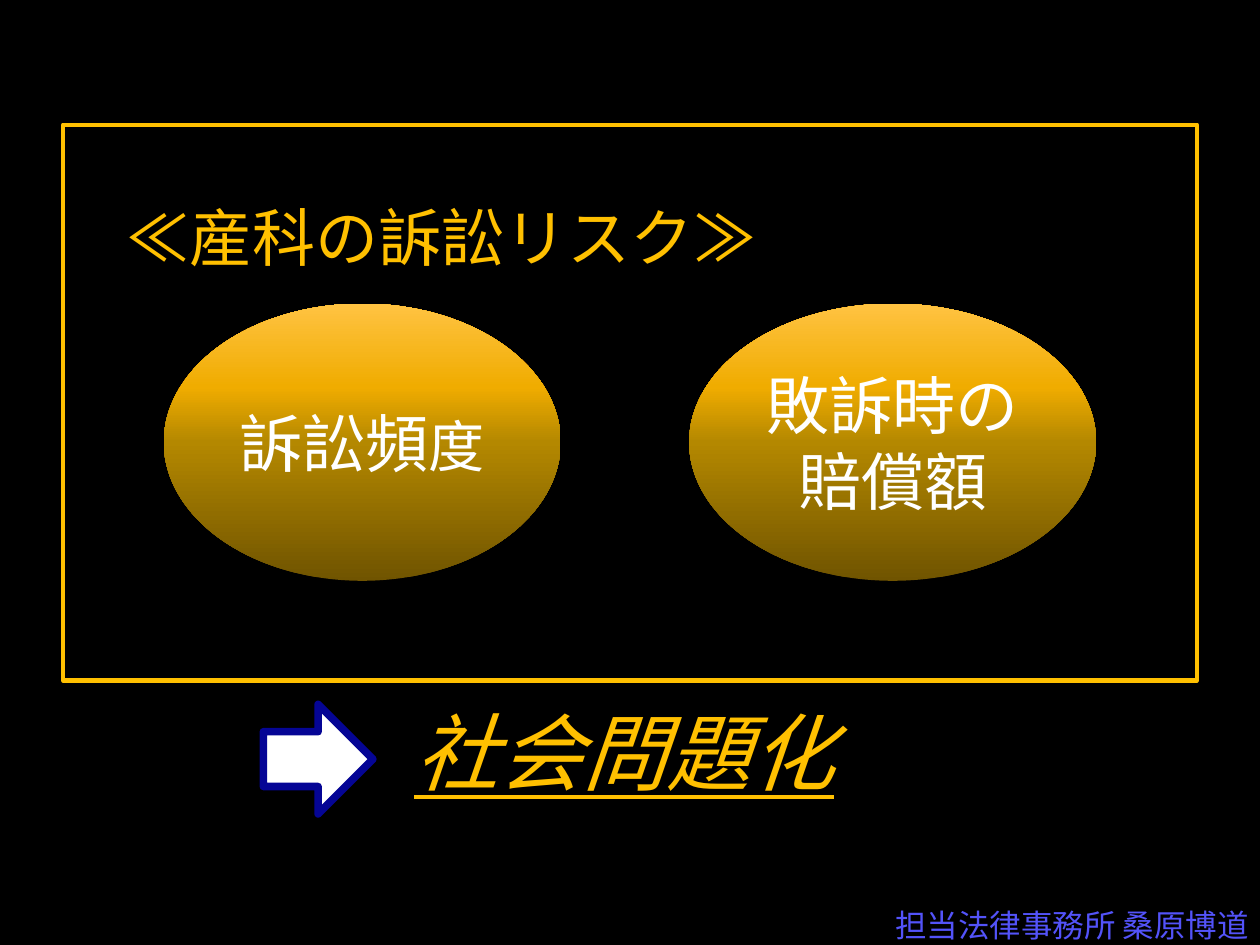
"""Build a slide on the litigation risk of obstetrics."""
from dataclasses import dataclass

from lxml import etree
from pptx import Presentation
from pptx.dml.color import RGBColor
from pptx.enum.shapes import MSO_SHAPE
from pptx.enum.text import MSO_ANCHOR, MSO_AUTO_SIZE, PP_ALIGN
from pptx.oxml.ns import qn
from pptx.util import Inches, Pt

OVAL, ARROW = MSO_SHAPE.OVAL, MSO_SHAPE.RIGHT_ARROW
TOP, MIDDLE = MSO_ANCHOR.TOP, MSO_ANCHOR.MIDDLE
LEFT, CENTER, RIGHT = PP_ALIGN.LEFT, PP_ALIGN.CENTER, PP_ALIGN.RIGHT
NO_AUTOFIT = MSO_AUTO_SIZE.NONE

FONT = "Calibri"
BLACK, WHITE, GOLD = "000000", "FFFFFF", "FFC000"
NAVY, VIOLET = "050595", "5353F9"
GOLD_STOPS = ((0, "705400"), (50, "B48800"), (70, "F0AC00"), (100, "FFC342"))

WIDTH, HEIGHT = Inches(10), Inches(7.5)
COLUMNS, ROWS = 100, 75


@dataclass(frozen=True)
class Area:
    """A place on the slide, in grid columns and rows."""
    column: float
    row: float
    columns: float
    rows: float

    def lengths(self) -> tuple[int, int, int, int]:
        """Return left, top, width and height."""
        cell_width, cell_height = WIDTH / COLUMNS, HEIGHT / ROWS
        return (round(self.column * cell_width), round(self.row * cell_height),
                round(self.columns * cell_width), round(self.rows * cell_height))


@dataclass(frozen=True)
class Words:
    """A piece of text in one format."""
    text: str
    size: float
    color: str
    emphasis: bool = False


@dataclass(frozen=True)
class Risk:
    """One risk factor shown in an oval."""
    area: Area
    words: tuple[Words, ...]


@dataclass(frozen=True)
class Caption:
    """A free line of text."""
    area: Area
    words: Words
    align: PP_ALIGN
    anchor: MSO_ANCHOR


FRAME = Area(5, 9.9, 90, 44.1)
ARROW_AREA = Area(20.9, 55.9, 8.7, 8.7)
HEADING = Words("≪産科の訴訟リスク≫", 36, GOLD)
RISKS = (
    Risk(Area(13, 24.1, 31.5, 22),
         (Words("訴訟頻", 36, WHITE), Words("度", 32, WHITE))),
    Risk(Area(54.7, 24.1, 32.3, 22), (Words("敗訴時の賠償額", 36, WHITE),)),
)
CAPTIONS = (
    Caption(Area(31.9, 55.1, 48.8, 10.2),
            Words("社会問題化", 48, GOLD, emphasis=True), LEFT, TOP),
    Caption(Area(62.3, 71.8, 37.8, 3.2),
            Words("担当法律事務所 桑原博道", 18, VIOLET), RIGHT, MIDDLE),
)


def rgb(color: str) -> RGBColor:
    """Turn a hex string into a colour."""
    return RGBColor.from_string(color)


def add_words(paragraph, words: Words) -> None:
    """Add one formatted run to a paragraph."""
    run = paragraph.add_run()
    run.text = words.text
    font = run.font
    font.name, font.size = FONT, Pt(words.size)
    font.color.rgb = rgb(words.color)
    if words.emphasis:
        font.italic = font.underline = True


def fill_gold(shape) -> None:
    """Fill a shape with a gold gradient, dark at the bottom."""
    shape.fill.gradient()
    shape.fill.gradient_angle = 90
    stops = shape._element.spPr.find(qn("a:gradFill")).find(qn("a:gsLst"))
    for stop in list(stops):
        stops.remove(stop)
    for percent, color in GOLD_STOPS:
        stop = etree.SubElement(stops, qn("a:gs"), pos=str(percent * 1000))
        etree.SubElement(stop, qn("a:srgbClr"), val=color)


def format_heading(placeholder) -> None:
    """Turn the body placeholder into the outlined frame with its heading."""
    (placeholder.left, placeholder.top,
     placeholder.width, placeholder.height) = FRAME.lengths()
    placeholder.line.color.rgb = rgb(GOLD)
    placeholder.line.width = Pt(2.5)
    frame = placeholder.text_frame
    frame.auto_size, frame.word_wrap = NO_AUTOFIT, True
    frame.vertical_anchor = TOP
    frame.margin_left, frame.margin_top = Inches(0.5), Inches(0.65)
    frame.margin_right = frame.margin_bottom = 0
    paragraph = frame.paragraphs[0]
    properties = paragraph._p.get_or_add_pPr()
    properties.set("marL", "0")
    properties.set("indent", "0")
    etree.SubElement(properties, qn("a:buNone"))
    paragraph.line_spacing, paragraph.space_before = 0.9, Pt(0)
    add_words(paragraph, HEADING)


def add_risk(slide, risk: Risk) -> None:
    """Draw a gold oval with centred text."""
    shape = slide.shapes.add_shape(OVAL, *risk.area.lengths())
    shape.shadow.inherit = False
    fill_gold(shape)
    shape.line.fill.background()
    frame = shape.text_frame
    frame.word_wrap, frame.vertical_anchor = True, MIDDLE
    paragraph = frame.paragraphs[0]
    paragraph.alignment = CENTER
    for words in risk.words:
        add_words(paragraph, words)


def add_arrow(slide) -> None:
    """Draw the arrow that leads to the conclusion."""
    shape = slide.shapes.add_shape(ARROW, *ARROW_AREA.lengths())
    shape.shadow.inherit = False
    shape.fill.solid()
    shape.fill.fore_color.rgb = rgb(WHITE)
    shape.line.color.rgb = rgb(NAVY)
    shape.line.width = Pt(4.33)


def add_caption(slide, caption: Caption) -> None:
    """Add a text box with one line."""
    frame = slide.shapes.add_textbox(*caption.area.lengths()).text_frame
    frame.word_wrap, frame.vertical_anchor = True, caption.anchor
    paragraph = frame.paragraphs[0]
    paragraph.alignment = caption.align
    add_words(paragraph, caption.words)


def main() -> None:
    """Build and save the presentation."""
    presentation = Presentation()
    presentation.slide_width, presentation.slide_height = WIDTH, HEIGHT
    slide = presentation.slides.add_slide(presentation.slide_layouts[1])
    slide.background.fill.solid()
    slide.background.fill.fore_color.rgb = rgb(BLACK)
    title = slide.shapes.title._element
    title.getparent().remove(title)
    format_heading(slide.placeholders[1])
    for risk in RISKS:
        add_risk(slide, risk)
    add_arrow(slide)
    for caption in CAPTIONS:
        add_caption(slide, caption)
    presentation.save("out.pptx")


if __name__ == "__main__":
    main()
